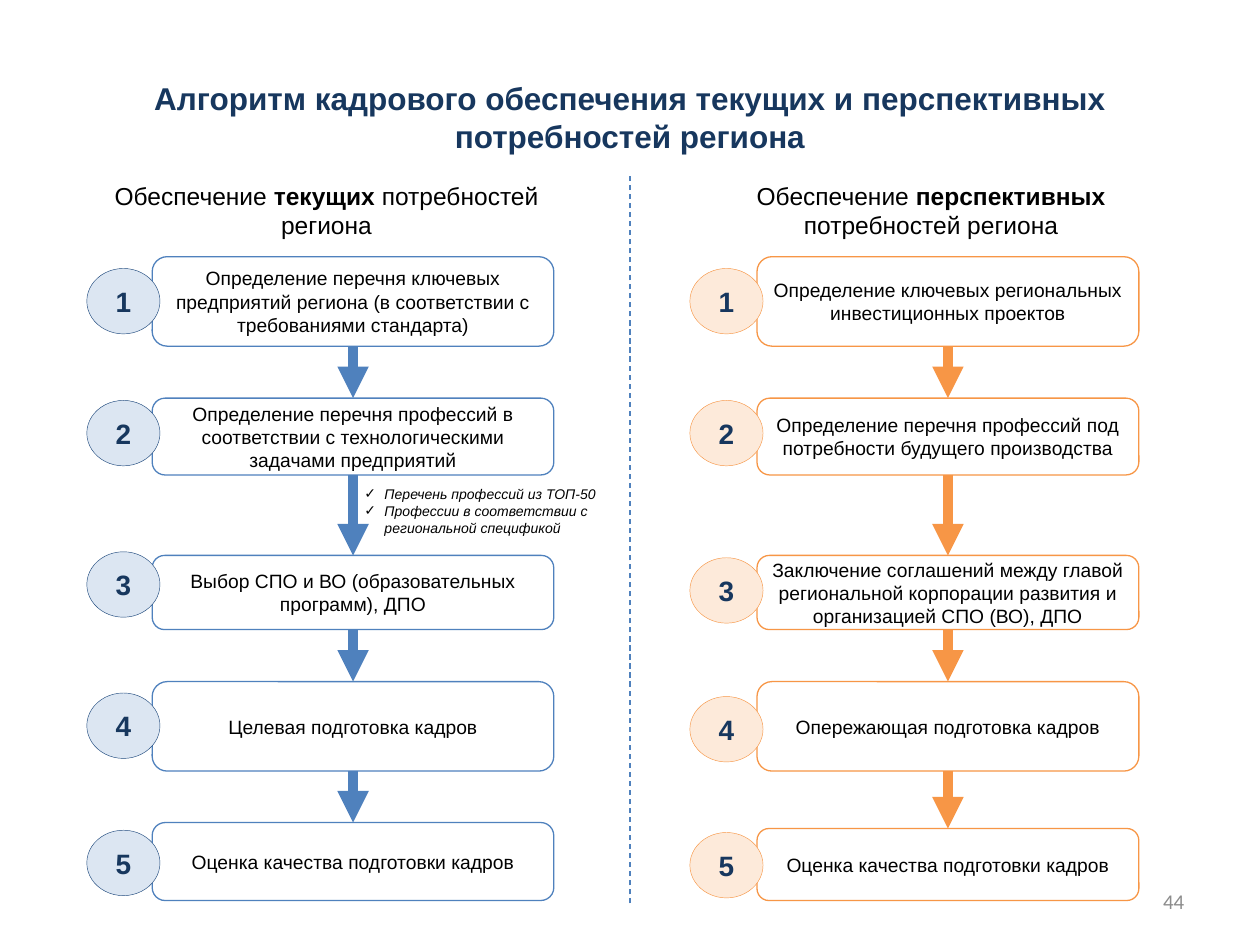
"""Build a slide with two parallel five-step staffing flows for a region."""
from itertools import pairwise

from lxml.etree import SubElement
from pptx import Presentation
from pptx.dml.color import RGBColor
from pptx.enum.dml import MSO_LINE
from pptx.enum.shapes import MSO_CONNECTOR, MSO_SHAPE
from pptx.enum.text import MSO_ANCHOR, PP_ALIGN
from pptx.oxml.ns import qn
from pptx.util import Pt

BLACK, NAVY, BLUE, ORANGE = "000000", "17375E", "4F81BD", "F79646"
TITLE = "Алгоритм кадрового обеспечения текущих и перспективных потребностей региона"
NOTES = ["Перечень профессий из ТОП-50", "Профессии в соответствии с региональной спецификой"]
BADGE_WIDTH, BADGE_HEIGHT = 41.8, 37.4
SIDE_INSET, TOP_INSET = 6.2, 3.2

FLOWS = [
    {
        "heading": [("Обеспечение", False), (" текущих ", True), ("потребностей региона", False)],
        "heading_area": (56.6, 100, 260, 40.3),
        "color": BLUE, "badge_fill": "DCE6F2", "badge_line": "1F497D",
        "left": 87, "width": 229.5, "badge_left": 49.6,
        "steps": [
            ("Определение перечня ключевых предприятий региона (в соответствии с требованиями стандарта)",
             146.7, 51.1, 153.4),
            ("Определение перечня профессий в соответствии с технологическими задачами предприятий",
             227.5, 43.9, 228.8),
            ("Выбор СПО и ВО (образовательных программ), ДПО", 317.4, 42.4, 315.3),
            ("Целевая подготовка кадров", 389.5, 51.1, 396),
            ("Оценка качества подготовки кадров", 470, 44.6, 474.4),
        ],
    },
    {
        "heading": [("Обеспечение ", False), ("перспективных ", True), ("потребностей региона", False)],
        "heading_area": (398.9, 100, 266.4, 40.3),
        "color": ORANGE, "badge_fill": "FDEADA", "badge_line": ORANGE,
        "left": 432.6, "width": 218.2, "badge_left": 394.2,
        "steps": [
            ("Определение ключевых региональных инвестиционных проектов", 146.7, 51.1, 153.4),
            ("Определение перечня профессий под потребности будущего производства", 227.5, 43.9, 228.8),
            ("Заключение соглашений между главой региональной корпорации развития и организацией СПО (ВО), ДПО",
             317.4, 42.4, 318.7),
            ("Опережающая подготовка кадров", 389.5, 51.1, 398),
            ("Оценка качества подготовки кадров", 473.4, 41.2, 475.7),
        ],
    },
]


def rgb(color):
    return RGBColor.from_string(color)


def set_frame(box, anchor):
    frame = box.text_frame
    frame.word_wrap = True
    frame.vertical_anchor = anchor
    frame.margin_left = frame.margin_right = Pt(SIDE_INSET)
    frame.margin_top = frame.margin_bottom = Pt(TOP_INSET)
    return frame


def add_span(para, text, size, color=BLACK, bold=False, italic=False, font="Arial"):
    span = para.add_run()
    span.text = text
    span.font.name, span.font.size = font, Pt(size)
    span.font.bold, span.font.italic = bold, italic
    span.font.color.rgb = rgb(color)


def add_text(slide, area, anchor=MSO_ANCHOR.TOP, align=PP_ALIGN.CENTER):
    box = slide.shapes.add_textbox(*map(Pt, area))
    para = set_frame(box, anchor).paragraphs[0]
    para.alignment = align
    return para


def add_box(slide, kind, area, fill, line, line_width, text, size, color=BLACK, bold=False):
    box = slide.shapes.add_shape(kind, *map(Pt, area))
    box.shadow.inherit = False
    box.fill.solid()
    box.fill.fore_color.rgb = rgb(fill)
    box.line.color.rgb = rgb(line)
    box.line.width = Pt(line_width)
    para = set_frame(box, MSO_ANCHOR.MIDDLE).paragraphs[0]
    para.alignment = PP_ALIGN.CENTER
    add_span(para, text, size, color, bold)
    return box


def add_line(slide, ends, color, width):
    line = slide.shapes.add_connector(MSO_CONNECTOR.STRAIGHT, *map(Pt, ends))
    line.line.color.rgb = rgb(color)
    line.line.width = Pt(width)
    SubElement(line._element.spPr, qn("a:effectLst"))
    return line


def add_arrow(slide, upper, lower, color):
    arrow = add_line(slide, (0, 0, 0, 0), color, 6)
    arrow.begin_connect(upper, 2)
    arrow.end_connect(lower, 0)
    SubElement(arrow.line._get_or_add_ln(), qn("a:tailEnd"), type="triangle")


def add_notes(slide):
    first = add_text(slide, (202, 274.3, 159.8, 47.5), align=PP_ALIGN.LEFT)
    frame = first._parent
    for index, text in enumerate(NOTES):
        para = frame.add_paragraph() if index else first
        properties = para._p.get_or_add_pPr()
        properties.set("marL", str(Pt(11.5)))
        properties.set("indent", str(Pt(-11.5)))
        SubElement(properties, qn("a:buFont"), typeface="Arial")
        SubElement(properties, qn("a:buChar"), char="✓")
        add_span(para, text, 8, italic=True)


def add_flow(slide, flow):
    heading = add_text(slide, flow["heading_area"])
    for text, bold in flow["heading"]:
        add_span(heading, text, 14, bold=bold)
    boxes = []
    for number, (text, top, height, badge_top) in enumerate(flow["steps"], 1):
        boxes.append(add_box(slide, MSO_SHAPE.ROUNDED_RECTANGLE,
                             (flow["left"], top, flow["width"], height),
                             "FFFFFF", flow["color"], 0.75, text, 11))
        add_box(slide, MSO_SHAPE.OVAL,
                (flow["badge_left"], badge_top, BADGE_WIDTH, BADGE_HEIGHT),
                flow["badge_fill"], flow["badge_line"], 0.25, str(number), 16, NAVY, True)
    for upper, lower in pairwise(boxes):
        add_arrow(slide, upper, lower, flow["color"])


def main():
    deck = Presentation()
    deck.slide_width, deck.slide_height = Pt(720), Pt(540)
    slide = deck.slides.add_slide(deck.slide_layouts[6])
    page_number = add_text(slide, (515.2, 500.4, 167.8, 28.8), MSO_ANCHOR.MIDDLE, PP_ALIGN.RIGHT)
    add_span(page_number, "44", 12, "8C8C8C", font="Calibri")
    title = add_text(slide, (36, 21.6, 648, 90), MSO_ANCHOR.MIDDLE)
    add_span(title, TITLE, 18, NAVY, bold=True)
    add_notes(slide)
    for flow in FLOWS:
        add_flow(slide, flow)
    divider = add_line(slide, (360, 516.2, 360, 100), BLUE, 0.75)
    divider.line.dash_style = MSO_LINE.DASH
    deck.save("out.pptx")


if __name__ == "__main__":
    main()
